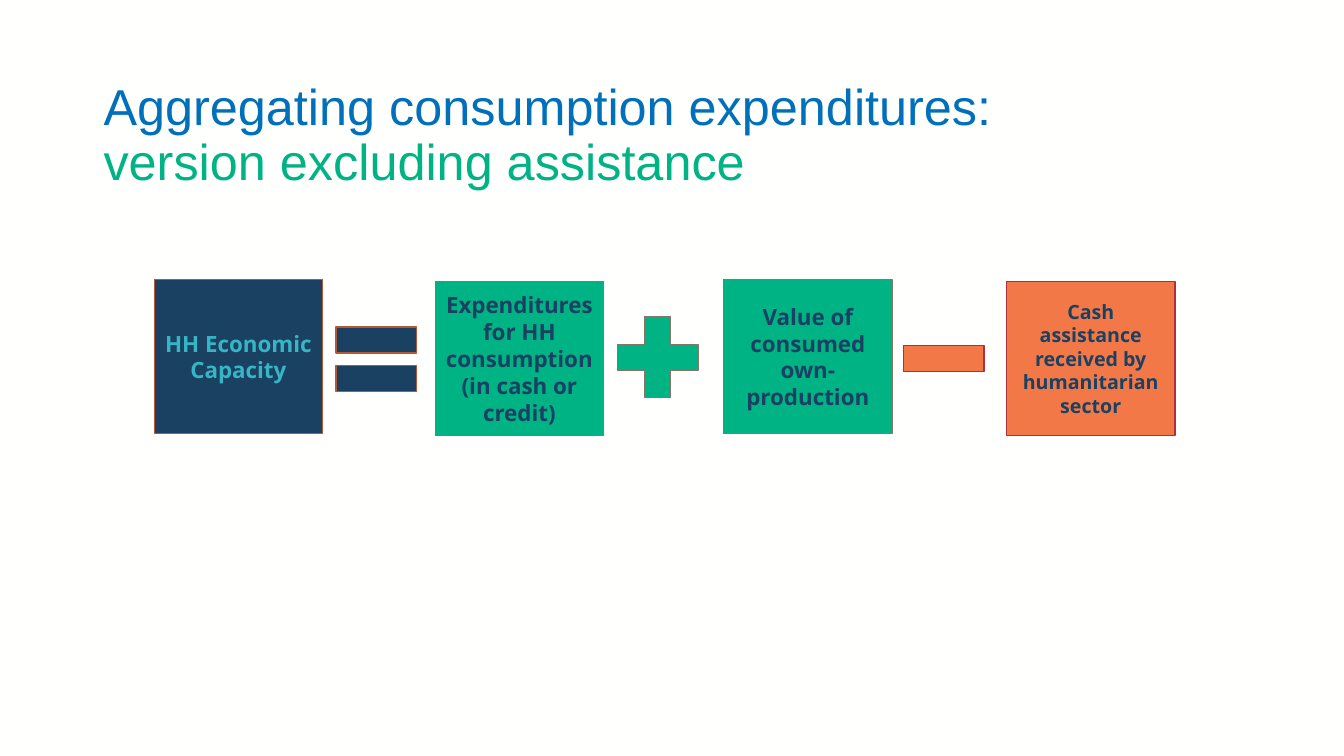
from dataclasses import dataclass

from pptx import Presentation
from pptx.dml.color import RGBColor
from pptx.enum.shapes import MSO_SHAPE
from pptx.enum.text import MSO_ANCHOR, PP_ALIGN
from pptx.util import Cm, Pt


@dataclass(frozen=True)
class Theme:
    background: str = "FFFFFE"
    blue: str = "0070BA"
    green: str = "00B385"
    navy: str = "1A4161"
    cyan: str = "36B5C5"
    orange: str = "F37847"
    rust: str = "B45935"
    taupe: str = "877668"
    crimson: str = "B12F38"
    title_font: str = "Arial"
    term_font: str = "Open Sans"
    title_size: int = 36
    term_size: int = 16
    small_term_size: int = 14
    outline: int = 1


@dataclass(frozen=True)
class Box:
    left: float
    top: float
    width: float
    height: float

    def inner(self, left, top, width, height):
        return Box(self.left + left, self.top + top, width, height)

    def lengths(self):
        return [Cm(value) for value in (self.left, self.top, self.width, self.height)]


THEME = Theme()
TERM_WIDTH, TERM_HEIGHT = 4.24, 3.89
OPERATOR_SIZE = 2.77


def add_text(paragraph, text, *, font, size, color, bold=False):
    run = paragraph.add_run()
    run.text = text
    run.font.name = font
    run.font.size = Pt(size)
    run.font.bold = bold
    run.font.color.rgb = RGBColor.from_string(color)


def add_figure(slide, kind, box, fill, line):
    shape = slide.shapes.add_shape(kind, *box.lengths())
    shape.shadow.inherit = False
    shape.fill.solid()
    shape.fill.fore_color.rgb = RGBColor.from_string(fill)
    shape.line.color.rgb = RGBColor.from_string(line)
    shape.line.width = Pt(THEME.outline)
    return shape


def add_term(slide, box, text, fill, line, color, size):
    shape = add_figure(slide, MSO_SHAPE.RECTANGLE, box, fill, line)
    frame = shape.text_frame
    frame.word_wrap = True
    frame.vertical_anchor = MSO_ANCHOR.MIDDLE
    paragraph = frame.paragraphs[0]
    paragraph.alignment = PP_ALIGN.CENTER
    add_text(paragraph, text, font=THEME.term_font, size=size, color=color, bold=True)


def add_title(slide, box):
    frame = slide.shapes.add_textbox(*box.lengths()).text_frame
    frame.word_wrap = True
    frame.vertical_anchor = MSO_ANCHOR.MIDDLE
    paragraph = frame.paragraphs[0]
    paragraph.line_spacing = 0.9
    style = {"font": THEME.title_font, "size": THEME.title_size}
    add_text(paragraph, "Aggregating consumption expenditures:", color=THEME.blue, **style)
    paragraph.add_line_break()
    add_text(paragraph, "version excluding assistance", color=THEME.green, **style)


def add_equation(slide, box):
    operators = [
        (MSO_SHAPE.MATH_MINUS, 18.51, 0.61, THEME.orange, THEME.crimson),
        (MSO_SHAPE.MATH_PLUS, 11.3, 0.58, THEME.green, THEME.taupe),
        (MSO_SHAPE.MATH_EQUAL, 4.21, 0.63, THEME.navy, THEME.rust),
    ]
    for kind, left, top, fill, line in operators:
        place = box.inner(left, top, OPERATOR_SIZE, OPERATOR_SIZE)
        add_figure(slide, kind, place, fill, line)

    terms = [
        ("HH Economic Capacity", 0, 0,
         THEME.navy, THEME.rust, THEME.cyan, THEME.term_size),
        ("Expenditures for HH consumption (in cash or credit)", 7.08, 0.05,
         THEME.green, THEME.taupe, THEME.navy, THEME.term_size),
        ("Value of consumed own-production", 14.35, 0,
         THEME.green, THEME.taupe, THEME.navy, THEME.term_size),
        ("Cash assistance received by humanitarian sector", 21.48, 0.05,
         THEME.orange, THEME.crimson, THEME.navy, THEME.small_term_size),
    ]
    for text, left, top, *colors_and_size in terms:
        place = box.inner(left, top, TERM_WIDTH, TERM_HEIGHT)
        add_term(slide, place, text, *colors_and_size)


def main():
    presentation = Presentation()
    presentation.slide_width = Cm(33.87)
    presentation.slide_height = Cm(19.05)
    slide = presentation.slides.add_slide(presentation.slide_layouts[6])
    slide.background.fill.solid()
    slide.background.fill.fore_color.rgb = RGBColor.from_string(THEME.background)
    add_title(slide, Box(2.36, 1.85, 29.29, 3.2))
    add_equation(slide, Box(3.89, 7.04, 25.72, 3.94))
    presentation.save("out.pptx")


if __name__ == "__main__":
    main()
